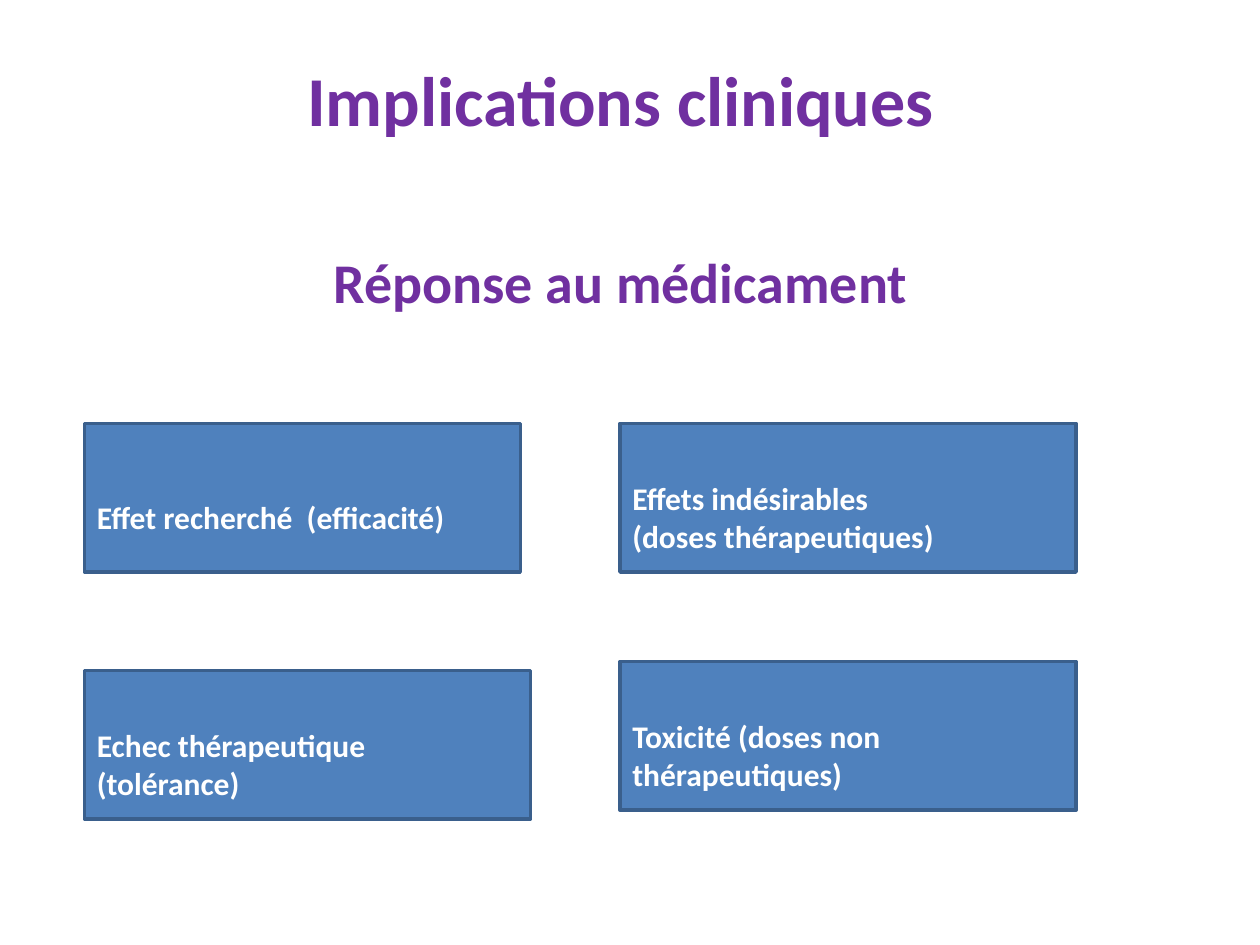
from pptx import Presentation, util as u
from pptx.dml.color import RGBColor
from pptx.enum import shapes, text

PURPLE = RGBColor(0x70, 0x30, 0xA0)
BLUE = RGBColor(0x4F, 0x81, 0xBD)
DARK_BLUE = RGBColor(0x3A, 0x5F, 0x8C)
WHITE = RGBColor(0xFF, 0xFF, 0xFF)


class SlideBuilder:
    font_name = "Calibri"

    def __init__(self, slide):
        self.slide = slide

    def fill_paragraph(self, paragraph, content, size, color, alignment, space_before=0):
        paragraph.text = content
        paragraph.font.color.rgb = color
        font_format = {"name": self.font_name, "size": u.Pt(size), "bold": True}
        paragraph_format = {"alignment": alignment, "space_before": u.Pt(space_before)}
        for target, values in ((paragraph.font, font_format), (paragraph, paragraph_format)):
            for name, value in values.items():
                setattr(target, name, value)

    def set_frame(self, frame, anchor, margin_top):
        frame_format = {
            "word_wrap": True,
            "vertical_anchor": anchor,
            "margin_top": u.Inches(margin_top),
        }
        for name, value in frame_format.items():
            setattr(frame, name, value)

    def headings(self, position, lines):
        """Add centred headings, each given as (content, size, space before)."""
        frame = self.slide.shapes.add_textbox(*map(u.Inches, position)).text_frame
        self.set_frame(frame, text.MSO_ANCHOR.TOP, 0.09)
        for index, (content, size, space_before) in enumerate(lines):
            paragraph = frame.add_paragraph() if index else frame.paragraphs[0]
            self.fill_paragraph(
                paragraph, content, size, PURPLE, text.PP_ALIGN.CENTER, space_before)

    def box(self, position, lines):
        shape = self.slide.shapes.add_shape(
            shapes.MSO_SHAPE.RECTANGLE, *map(u.Inches, position))
        shape.shadow.inherit = False
        shape.fill.solid()
        shape.fill.fore_color.rgb = BLUE
        shape.line.color.rgb = DARK_BLUE
        shape.line.width = u.Pt(2)
        frame = shape.text_frame
        # The deeper top margin sets the text half a line below the middle.
        self.set_frame(frame, text.MSO_ANCHOR.MIDDLE, 0.35)
        for index, content in enumerate(lines):
            paragraph = frame.add_paragraph() if index else frame.paragraphs[0]
            self.fill_paragraph(paragraph, content, 18, WHITE, text.PP_ALIGN.LEFT)


def main():
    presentation = Presentation()
    presentation.slide_width = u.Inches(10)
    presentation.slide_height = u.Inches(7.5)
    builder = SlideBuilder(presentation.slides.add_slide(presentation.slide_layouts[6]))

    builder.headings((0.35, 0.36, 9.15, 6.77), [
        ("Implications cliniques", 40, 0),
        ("Réponse au médicament", 32, 61),
    ])

    left, right, top, height = 0.67, 4.92, 3.36, 1.18
    responses = [
        (left, top, 3.46, ["Effet recherché  (efficacité)"]),
        (right, top, 3.62, ["Effets indésirables", "(doses thérapeutiques)"]),
        (left, 5.32, 3.54, ["Echec thérapeutique", "(tolérance)"]),
        (right, 5.25, 3.62, ["Toxicité (doses non", "thérapeutiques)"]),
    ]
    for x, y, width, lines in responses:
        builder.box((x, y, width, height), lines)

    presentation.save("out.pptx")


if __name__ == "__main__":
    main()
